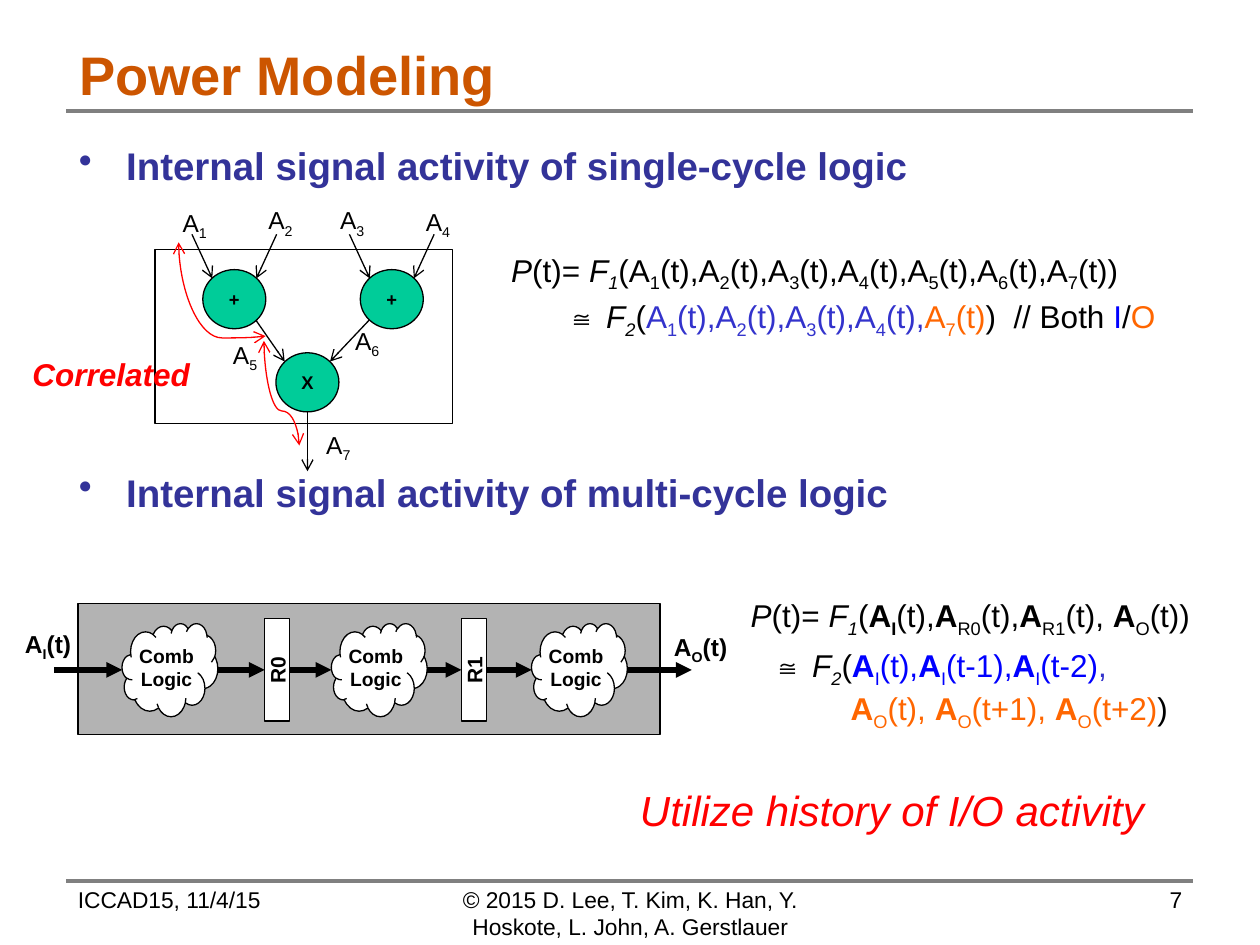
from dataclasses import dataclass
from typing import Optional

from lxml.etree import SubElement
from pptx import Presentation
from pptx.dml.color import RGBColor
from pptx.enum.shapes import MSO_CONNECTOR as Link, MSO_SHAPE as Shape
from pptx.enum.text import MSO_ANCHOR as Anchor, PP_ALIGN as Align
from pptx.oxml.ns import qn
from pptx.util import Pt

COLORS = {
    "black": "000000", "white": "FFFFFF", "rule": "808080", "title": "CC5500",
    "heading": "333399", "adder": "00CC99", "pipeline": "B3B3B3", "red": "FF0000",
    "input": "3333CC", "blue": "0000FF", "output": "FF6600",
}


@dataclass
class Run:
    text: str
    color: Optional[str] = None
    bold: Optional[bool] = None
    italic: Optional[bool] = None
    sub: bool = False


@dataclass
class Line:
    runs: list
    indent: float = 0
    hanging: float = 0
    before: float = 0
    bullet: str = ""


@dataclass
class Box:
    left: float
    top: float
    width: float
    height: float

    def lengths(self) -> tuple:
        return Pt(self.left), Pt(self.top), Pt(self.width), Pt(self.height)


def rgb(color: str) -> RGBColor:
    return RGBColor.from_string(COLORS[color])


def write(frame, lines, size=18, color="black", bold=False, italic=False,
          align=Align.LEFT, anchor=Anchor.TOP, inset=(7.2, 3.6), wrap=True) -> None:
    frame.word_wrap = wrap
    frame.vertical_anchor = anchor
    frame.margin_left = frame.margin_right = Pt(inset[0])
    frame.margin_top = frame.margin_bottom = Pt(inset[1])
    if isinstance(lines, str):
        lines = [Line([Run(text)]) for text in lines.split("\n")]
    for number, line in enumerate(lines):
        paragraph = frame.add_paragraph() if number else frame.paragraphs[0]
        paragraph.alignment = align
        paragraph.space_before = Pt(line.before)
        props = paragraph._p.get_or_add_pPr()
        props.set("marL", str(Pt(line.indent)))
        props.set("indent", str(Pt(-line.hanging)))
        if line.bullet:
            SubElement(props, qn("a:buChar")).set("char", line.bullet)
        for part in line.runs:
            run = paragraph.add_run()
            run.text = part.text
            font = run.font
            font.name, font.size = "Arial", Pt(size)
            font.bold = bold if part.bold is None else part.bold
            font.italic = italic if part.italic is None else part.italic
            font.color.rgb = rgb(part.color or color)
            if part.sub:
                run._r.get_or_add_rPr().set("baseline", "-25000")


def add_text(slide, box: Box, lines, **fmt) -> None:
    write(slide.shapes.add_textbox(*box.lengths()).text_frame, lines, **fmt)


def add_block(slide, kind, box: Box, fill: Optional[str] = None, text: str = "", **fmt):
    block = slide.shapes.add_shape(kind, *box.lengths())
    block.shadow.inherit = False
    if fill:
        block.fill.solid()
        block.fill.fore_color.rgb = rgb(fill)
    else:
        block.fill.background()
    block.line.color.rgb = rgb("black")
    block.line.width = Pt(0.75)
    if text:
        write(block.text_frame, text, bold=True, align=Align.CENTER, anchor=Anchor.MIDDLE, **fmt)
    return block


def add_link(slide, start, end, color="black", width=0.75, head=None, tail=None, kind=Link.STRAIGHT):
    link = slide.shapes.add_connector(kind, *map(Pt, (*start, *end)))
    link.line.color.rgb = rgb(color)
    link.line.width = Pt(width)
    outline = link.line._get_or_add_ln()
    for tag, arrow in (("a:headEnd", head), ("a:tailEnd", tail)):
        if arrow:
            SubElement(outline, qn(tag)).set("type", arrow)
    SubElement(link._element.spPr, qn("a:effectLst"))
    return link


def add_correlation(slide, box: Box, bend: int) -> None:
    curve = add_link(slide, (box.left, box.top), (box.left + box.width, box.top + box.height),
                     color="red", head="arrow", tail="arrow", kind=Link.CURVE)
    properties = curve._element.spPr
    transform = properties.find(qn("a:xfrm"))
    transform.set("rot", "16200000")
    transform.set("flipH", "1")
    geometry = properties.find(qn("a:prstGeom"))
    adjustments = geometry.find(qn("a:avLst"))
    if adjustments is None:
        adjustments = SubElement(geometry, qn("a:avLst"))
    guide = SubElement(adjustments, qn("a:gd"))
    guide.set("name", "adj1")
    guide.set("fmla", f"val {bend * 1000}")


def signal(index, tail="(t),", color=None, bold=None, sub_bold=None) -> list:
    return [Run("A", color, bold), Run(str(index), color, sub_bold, sub=True), Run(tail, color)]


def function(number: int) -> list:
    return [Run("F", italic=True), Run(str(number), italic=True, sub=True), Run("(")]


def power() -> list:
    return [Run("P", italic=True), Run("(t)= "), *function(1)]


def signals(indices, **fmt) -> list:
    return [run for index in indices for run in signal(index, **fmt)]


def add_frame(slide) -> None:
    title = slide.shapes.title
    title.left, title.top, title.width, title.height = Box(38, 21, 644, 42.5).lengths()
    write(title.text_frame, "Power Modeling", size=31, color="title", bold=True, anchor=Anchor.MIDDLE)
    for y in (63.4, 503.3):
        add_link(slide, (38, y), (682, y), color="rule", width=2.25)
    headings = [("Internal signal activity of single-cycle logic", 2.4),
                ("Internal signal activity of multi-cycle logic", 160)]
    add_text(slide, Box(38, 77.8, 644, 414),
             [Line([Run(text)], 27, 27, before, "•") for text, before in headings],
             size=22, color="heading", bold=True)
    footers = [(38, 169, Align.LEFT, "ICCAD15, 11/4/15"),
               (256.3, 207.4, Align.CENTER, "© 2015 D. Lee, T. Kim, K. Han, Y. Hoskote, L. John, A. Gerstlauer"),
               (513, 169, Align.RIGHT, "7")]
    for left, width, align, text in footers:
        add_text(slide, Box(left, 503.3, width, 33), text, size=13, align=align, inset=(6.5, 2.9))


def add_single_cycle(slide) -> None:
    add_block(slide, Shape.RECTANGLE, Box(88.6, 142.6, 170, 99.4))
    for left, top, operator in ((115.9, 154.1, "+"), (205.9, 154.1, "+"), (157.7, 201.6, "X")):
        add_block(slide, Shape.OVAL, Box(left, top, 36, 33.8), "adder", operator, size=10.5, inset=(0, 0))
    for adder_center in (133.9, 223.9):
        for side in (-1, 1):
            add_link(slide, (adder_center + 24.2 * side, 133.9),
                     (adder_center + 12.6 * side, 159.1), tail="arrow")
    for start, end in (((146.2, 182.9), (162.7, 206.6)), ((211, 182.9), (188.6, 206.6)),
                       ((175.7, 235.4), (175.7, 269.3))):
        add_link(slide, start, end, tail="arrow")
    labels = [(97.2, 115.2), (146.2, 113.8), (187.2, 113.8), (236.2, 114.5),
              (126, 190.8), (195.8, 182.9), (179.3, 241.9)]
    for index, (left, top) in enumerate(labels, 1):
        add_text(slide, Box(left, top, 30.2, 27.4), [Line(signal(index, ""))], size=14, wrap=False)
    add_text(slide, Box(11.5, 199.4, 108, 28.8), "Correlated", color="red", bold=True, italic=True)
    add_correlation(slide, Box(100.1, 140.4, 53.6, 49.7), 102)
    add_correlation(slide, Box(131, 214.6, 59.8, 20.2), 67)
    add_text(slide, Box(285, 139.7, 425.5, 28.8),
             [Line([*power(), *signals(range(1, 7)), *signal(7, "(t))")])])
    add_text(slide, Box(275, 166.3, 416.2, 28.8),
             [Line([Run("≅ "), *function(2), *signals(range(1, 5), color="input"),
                    *signal(7, "(t)", "output"), Run(")  // Both "),
                    Run("I", "blue"), Run("/"), Run("O", "output")], indent=41.3)])


def add_multi_cycle(slide) -> None:
    axis = 382.8
    add_block(slide, Shape.FLOWCHART_PROCESS, Box(44.6, 344.9, 332.6, 74.9), "pipeline")
    cloud_lefts = (69.8, 189.4, 303.8)
    cloud_width = 54.7
    for left in cloud_lefts:
        add_block(slide, Shape.CLOUD, Box(left, axis - 26.6, cloud_width, 53.2), "white",
                  "Comb\nLogic", size=11, inset=(0, 3.6))
    for number, left in enumerate((151.2, 263.7)):
        register = add_block(slide, Shape.RECTANGLE, Box(left, axis - 29.2, 14.4, 58.4),
                             "white", f"R{number}", size=12)
        register.text_frame._txBody.bodyPr.set("vert", "vert270")
        into = add_link(slide, (cloud_lefts[number] + cloud_width, axis), (left, axis), width=3, tail="triangle")
        into.end_connect(register, 1)
        out = add_link(slide, (left + 14.4, axis), (cloud_lefts[number + 1], axis), width=3, tail="triangle")
        out.begin_connect(register, 3)
    for start, end in ((31, cloud_lefts[0]), (cloud_lefts[-1] + cloud_width, 395.3)):
        add_link(slide, (start, axis), (end, axis), width=3, tail="triangle")
    for index, left, top in (("I", 7.2, 355.7), ("O", 378, 357.8)):
        add_text(slide, Box(left, top, 52.6, 24.5), [Line(signal(index, "(t)"))], size=14, bold=True)
    add_text(slide, Box(421.9, 337, 298.1, 28.8),
             [Line([*power(), *signal("I", bold=True, sub_bold=True), *signals(("R0", "R1"), bold=True)[:-1],
                    Run("(t), "), *signal("O", "(t))", bold=True)])])
    inputs = [run for tail in ("(t),", "(t-1),", "(t-2)") for run in signal("I", tail, "blue", True)]
    outputs = [run for tail in ("(t), ", "(t+1), ", "(t+2)") for run in signal("O", tail, "output", True)]
    add_text(slide, Box(414, 365.8, 285, 51),
             [Line([Run("≅ "), *function(2), *inputs, Run(",", "input")], indent=20),
              Line([*outputs, Run(")")], indent=65)])
    add_text(slide, Box(358.6, 445, 323.3, 36), "Utilize history of I/O activity",
             size=24, color="red", italic=True)


def main() -> None:
    deck = Presentation()
    deck.slide_width, deck.slide_height = Pt(720), Pt(540)
    slide = deck.slides.add_slide(deck.slide_layouts[5])
    add_frame(slide)
    add_single_cycle(slide)
    add_multi_cycle(slide)
    deck.save("out.pptx")


if __name__ == "__main__":
    main()
